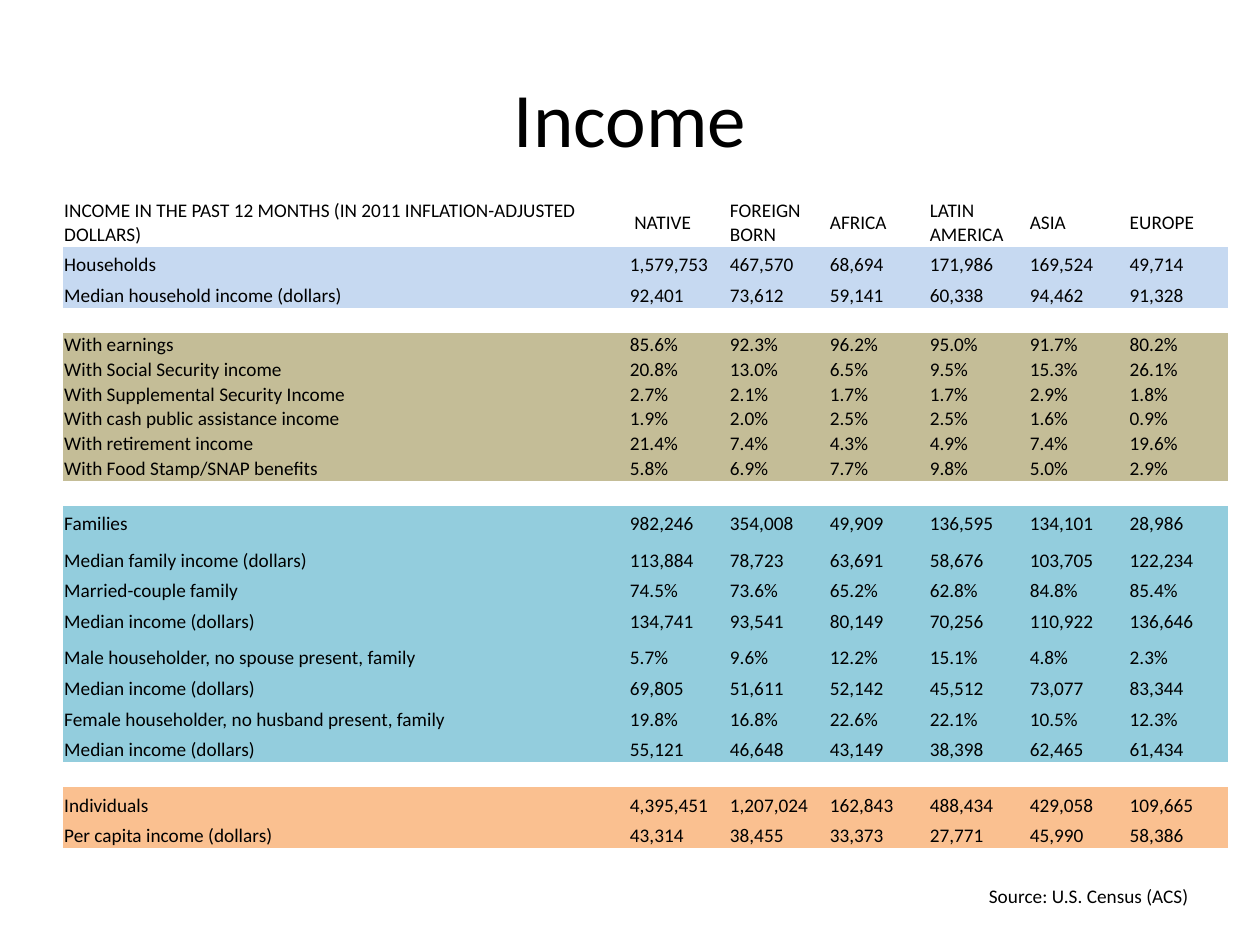
from dataclasses import dataclass

from lxml.etree import SubElement
from pptx import Presentation
from pptx.dml.color import RGBColor as RGB
from pptx.enum.text import MSO_ANCHOR as ANCHOR, PP_ALIGN as ALIGN
from pptx.oxml.ns import qn
from pptx.util import Inches, Pt


@dataclass(frozen=True)
class Theme:
    font: str = "Calibri"
    ink: str = "000000"
    households: str = "C6D9F1"
    sources: str = "C4BD97"
    families: str = "93CDDD"
    individuals: str = "FAC090"
    title_size: int = 44
    body_size: int = 11
    plain_table: str = "{2D5ABB26-0587-4C30-8999-92F81FD0307C}"


THEME = Theme()

HEADER = ["INCOME IN THE PAST 12 MONTHS (IN 2011 INFLATION-ADJUSTED DOLLARS)",
          " NATIVE", "FOREIGN BORN", "AFRICA", "LATIN AMERICA", "ASIA", "EUROPE"]

GROUPS = [
    (THEME.households, """
Households|1,579,753|467,570|68,694|171,986|169,524|49,714
Median household income (dollars)|92,401|73,612|59,141|60,338|94,462|91,328
"""),
    (THEME.sources, """
With earnings|85.6%|92.3%|96.2%|95.0%|91.7%|80.2%
With Social Security income|20.8%|13.0%|6.5%|9.5%|15.3%|26.1%
With Supplemental Security Income|2.7%|2.1%|1.7%|1.7%|2.9%|1.8%
With cash public assistance income|1.9%|2.0%|2.5%|2.5%|1.6%|0.9%
With retirement income|21.4%|7.4%|4.3%|4.9%|7.4%|19.6%
With Food Stamp/SNAP benefits|5.8%|6.9%|7.7%|9.8%|5.0%|2.9%
"""),
    (THEME.families, """
Families|982,246|354,008|49,909|136,595|134,101|28,986
Median family income (dollars)|113,884|78,723|63,691|58,676|103,705|122,234
Married-couple family|74.5%|73.6%|65.2%|62.8%|84.8%|85.4%
Median income (dollars)|134,741|93,541|80,149|70,256|110,922|136,646
Male householder, no spouse present, family|5.7%|9.6%|12.2%|15.1%|4.8%|2.3%
Median income (dollars)|69,805|51,611|52,142|45,512|73,077|83,344
Female householder, no husband present, family|19.8%|16.8%|22.6%|22.1%|10.5%|12.3%
Median income (dollars)|55,121|46,648|43,149|38,398|62,465|61,434
"""),
    (THEME.individuals, """
Individuals|4,395,451|1,207,024|162,843|488,434|429,058|109,665
Per capita income (dollars)|43,314|38,455|33,373|27,771|45,990|58,386
"""),
]

TALL_ROWS = {1, 11, 12, 14, 15, 17, 20}


def set_all(obj, values):
    for name, value in values.items():
        setattr(obj, name, value)


def table_rows():
    rows = [(None, HEADER)]
    for i, (color, block) in enumerate(GROUPS):
        if i:
            rows.append((None, [""] * len(HEADER)))
        rows += [(color, line.split("|")) for line in block.strip().splitlines()]
    return rows


def row_heights(count, total, header=0.38, tall=0.29):
    short = (total - header - tall * len(TALL_ROWS)) / (count - 1 - len(TALL_ROWS))
    return [header] + [tall if i in TALL_ROWS else short for i in range(1, count)]


class Deck:
    def __init__(self, theme):
        self.theme = theme
        self.prs = Presentation()
        set_all(self.prs, {"slide_width": Inches(10), "slide_height": Inches(7.5)})
        self.slide = self.prs.slides.add_slide(self.prs.slide_layouts[6])

    def run(self, p, text, size):
        r = p.add_run()
        r.text = text
        set_all(r.font, {"name": self.theme.font, "size": Pt(size)})
        r.font.color.rgb = RGB.from_string(self.theme.ink)

    def text(self, box, text, size, align=ALIGN.LEFT, anchor=ANCHOR.TOP):
        tf = self.slide.shapes.add_textbox(*map(Inches, box)).text_frame
        set_all(tf, {"word_wrap": True, "vertical_anchor": anchor})
        p = tf.paragraphs[0]
        p.alignment = align
        self.run(p, text, size)

    def cell(self, cell, text, color):
        side = Inches(0.01)
        set_all(cell, {"margin_left": side, "margin_right": side, "margin_top": 0,
                       "margin_bottom": 0, "vertical_anchor": ANCHOR.MIDDLE})
        if color:
            cell.fill.solid()
            cell.fill.fore_color.rgb = RGB.from_string(color)
        else:
            cell.fill.background()
        p = cell.text_frame.paragraphs[0]
        if text:
            self.run(p, text, self.theme.body_size)
        else:
            SubElement(p._p, qn("a:endParaRPr"), sz=str(self.theme.body_size * 100))

    def table(self, box, rows, first_width):
        cols = len(rows[0][1])
        frame = self.slide.shapes.add_table(len(rows), cols, *map(Inches, box))
        table = frame.table
        set_all(table, {"first_row": False, "horz_banding": False})
        table._tbl.tblPr.find(qn("a:tableStyleId")).text = self.theme.plain_table
        value_width = (box[2] - first_width) / (cols - 1)
        for i, col in enumerate(table.columns):
            col.width = Inches(value_width if i else first_width)
        for row, height, (color, texts) in zip(table.rows, row_heights(len(rows), box[3]), rows):
            row.height = Inches(height)
            for cell, text in zip(row.cells, texts):
                self.cell(cell, text, color)


def main():
    deck = Deck(THEME)
    deck.text((0.5, 0.3, 9, 1.25), "Income", THEME.title_size, ALIGN.CENTER, ANCHOR.MIDDLE)
    deck.table((0.5, 1.58, 9.25, 5.16), table_rows(), first_width=4.49)
    deck.text((7.75, 6.97, 2.08, 0.29), "Source: U.S. Census (ACS)", THEME.body_size)
    deck.prs.save("out.pptx")


if __name__ == "__main__":
    main()
